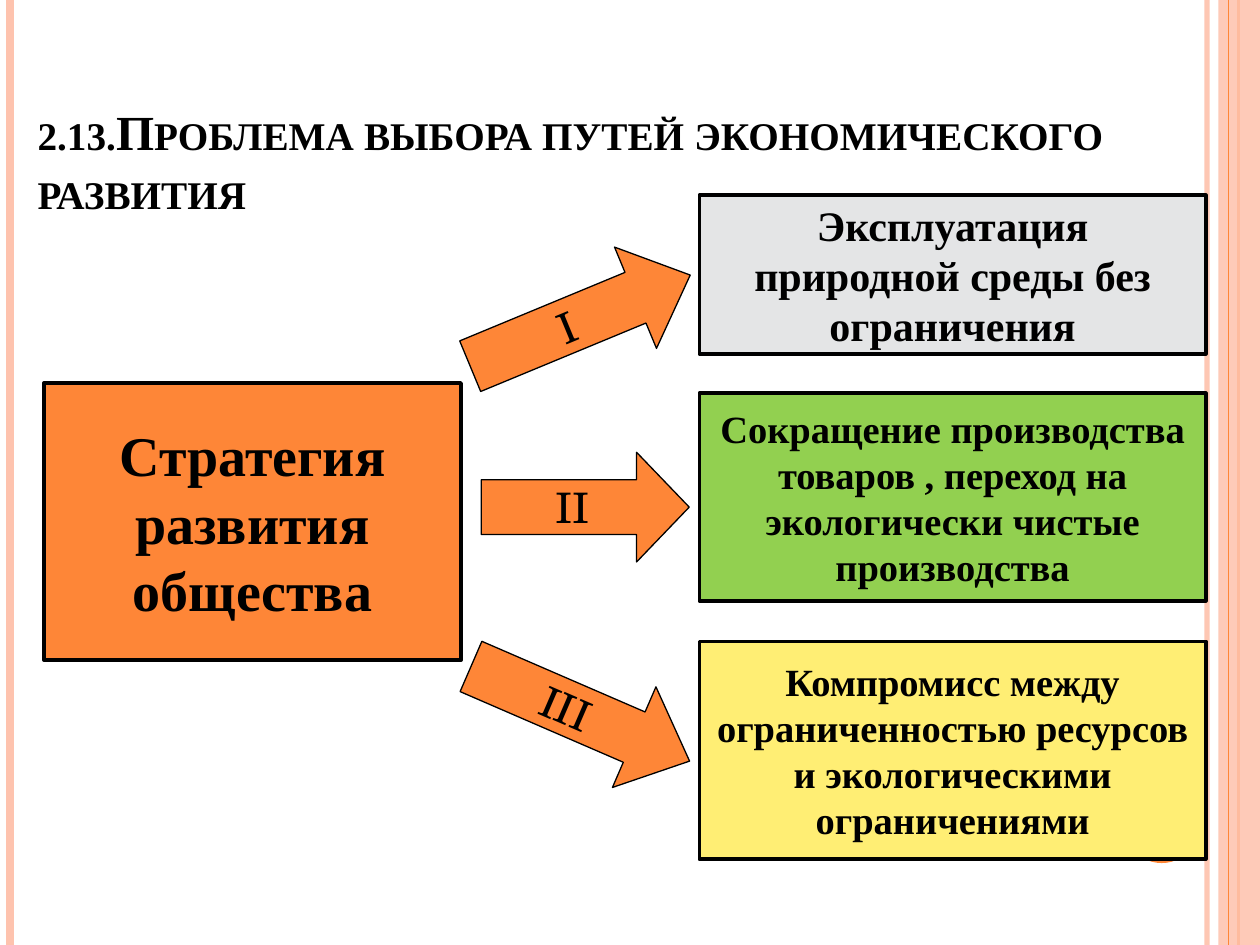
from dataclasses import dataclass

from lxml import etree
from pptx import Presentation
from pptx.dml.color import RGBColor
from pptx.enum.shapes import MSO_CONNECTOR, MSO_SHAPE
from pptx.enum.text import MSO_ANCHOR, PP_ALIGN
from pptx.oxml.ns import qn
from pptx.util import Inches, Pt

STRAIGHT = MSO_CONNECTOR.STRAIGHT
RECT, OVAL, ARROW = MSO_SHAPE.RECTANGLE, MSO_SHAPE.OVAL, MSO_SHAPE.RIGHT_ARROW
MIDDLE, BOTTOM = MSO_ANCHOR.MIDDLE, MSO_ANCHOR.BOTTOM
CENTER, LEFT = PP_ALIGN.CENTER, PP_ALIGN.LEFT


@dataclass(frozen=True)
class Theme:
    orange: str = "FE8637"
    peach: str = "FEC3AE"
    gray: str = "E4E5E6"
    green: str = "92D050"
    yellow: str = "FFEE74"
    ink: str = "000000"
    font: str = "Times New Roman"
    numeral_font: str = "TeX Gyre Schola"
    title: int = 28
    strategy: int = 32
    large: int = 24
    body: int = 22
    box_line: float = 2
    arrow_line: float = 0.75


T = Theme()


@dataclass(frozen=True)
class Stripe:
    x: float
    color: str
    width: float
    opacity: int = 100


@dataclass(frozen=True)
class Box:
    text: str
    left: float
    top: float
    width: float
    height: float
    fill: str
    size: int


@dataclass(frozen=True)
class Arrow:
    numeral: str
    left: float
    top: float
    width: float
    head: float
    rotation: float = 0


SLIDE_W, SLIDE_H = 10, 7.5
OPTION_X, OPTION_W = 5.55, 4.02
ARROW_H = 0.87

LEFT_STRIPES = [
    Stripe(9.58, T.peach, 3, 93),
    Stripe(0.08, T.peach, 4.5),
    Stripe(9.83, T.orange, 1.5),
]
EDGE_STRIPE = Stripe(9.75, T.orange, 0.75)

BOXES = [
    Box("Стратегия развития общества", 0.35, 3.04, 3.31, 2.2, T.orange, T.strategy),
    Box("Эксплуатация природной среды без ограничения",
        OPTION_X, 1.55, OPTION_W, 1.26, T.gray, T.large),
    Box("Сокращение производства товаров , переход на экологически чистые производства",
        OPTION_X, 3.12, OPTION_W, 1.65, T.green, T.body),
    Box("Компромисс между ограниченностью ресурсов и экологическими ограничениями",
        OPTION_X, 5.09, OPTION_W, 1.73, T.yellow, T.body),
]
ARROWS = [
    Arrow("I", 3.66, 2.11, 1.89, 0.54, 337.5),
    Arrow("III", 3.66, 5.23, 1.89, 0.55, 23.4),
    Arrow("II", 3.82, 3.59, 1.65, 0.48),
]


def set_opacity(element, percent: int) -> None:
    if percent < 100:
        color = next(element.iter(qn("a:srgbClr")))
        etree.SubElement(color, qn("a:alpha"), val=str(percent * 1000))


def add_stripe(s, stripe: Stripe) -> None:
    x = Inches(stripe.x)
    line = s.shapes.add_connector(STRAIGHT, x, 0, x, Inches(SLIDE_H))
    line.line.color.rgb = RGBColor.from_string(stripe.color)
    line.line.width = Pt(stripe.width)
    props = line._element.spPr
    set_opacity(props, stripe.opacity)
    etree.SubElement(props, qn("a:effectLst"))


def add_filled(s, kind, left: float, top: float, width: float, height: float,
               fill: str, line_width: float = 0, opacity: int = 100):
    sp = s.shapes.add_shape(kind, Inches(left), Inches(top), Inches(width), Inches(height))
    sp.shadow.inherit = False
    sp.fill.solid()
    sp.fill.fore_color.rgb = RGBColor.from_string(fill)
    set_opacity(sp._element.spPr, opacity)
    if line_width:
        sp.line.color.rgb = RGBColor.from_string(T.ink)
        sp.line.width = Pt(line_width)
    else:
        sp.line.fill.background()
    return sp


def write(sp, text: str, size: int, font: str = T.font, bold: bool = True,
          wrap: bool = True, align=CENTER, anchor=MIDDLE):
    tf = sp.text_frame
    tf.word_wrap = wrap
    tf.vertical_anchor = anchor
    p = tf.paragraphs[0]
    p.alignment = align
    r = p.add_run()
    r.text = text
    r.font.name = font
    r.font.size = Pt(size)
    r.font.bold = bold
    r.font.color.rgb = RGBColor.from_string(T.ink)
    return r


def add_title(s, text: str) -> None:
    sp = s.shapes.add_textbox(Inches(0.2), Inches(0.29), Inches(9.37), Inches(1.5))
    r = write(sp, text, T.title, align=LEFT, anchor=BOTTOM)
    r._r.get_or_add_rPr().set("cap", "small")


def add_box(s, box: Box) -> None:
    sp = add_filled(s, RECT, box.left, box.top, box.width, box.height,
                    box.fill, T.box_line)
    write(sp, box.text, box.size)


def add_arrow(s, arrow: Arrow) -> None:
    sp = add_filled(s, ARROW, arrow.left, arrow.top, arrow.width, ARROW_H,
                    T.orange, T.arrow_line)
    sp.adjustments[0] = 0.5
    sp.adjustments[1] = arrow.head
    sp.rotation = arrow.rotation
    write(sp, arrow.numeral, T.large, T.numeral_font, bold=False, wrap=False)


def main() -> None:
    prs = Presentation()
    prs.slide_width, prs.slide_height = Inches(SLIDE_W), Inches(SLIDE_H)
    s = prs.slides.add_slide(prs.slide_layouts[6])

    # Background decoration
    for stripe in LEFT_STRIPES:
        add_stripe(s, stripe)
    add_filled(s, RECT, 9.67, 0, 0.33, SLIDE_H, T.peach, opacity=87)
    add_stripe(s, EDGE_STRIPE)
    add_filled(s, OVAL, 8.92, 6.25, 0.6, 0.6, T.orange)

    # Title and diagram
    add_title(s, "2.13.Проблема выбора путей экономического развития")
    for box in BOXES:
        add_box(s, box)
    for arrow in ARROWS:
        add_arrow(s, arrow)

    prs.save("out.pptx")


if __name__ == "__main__":
    main()
